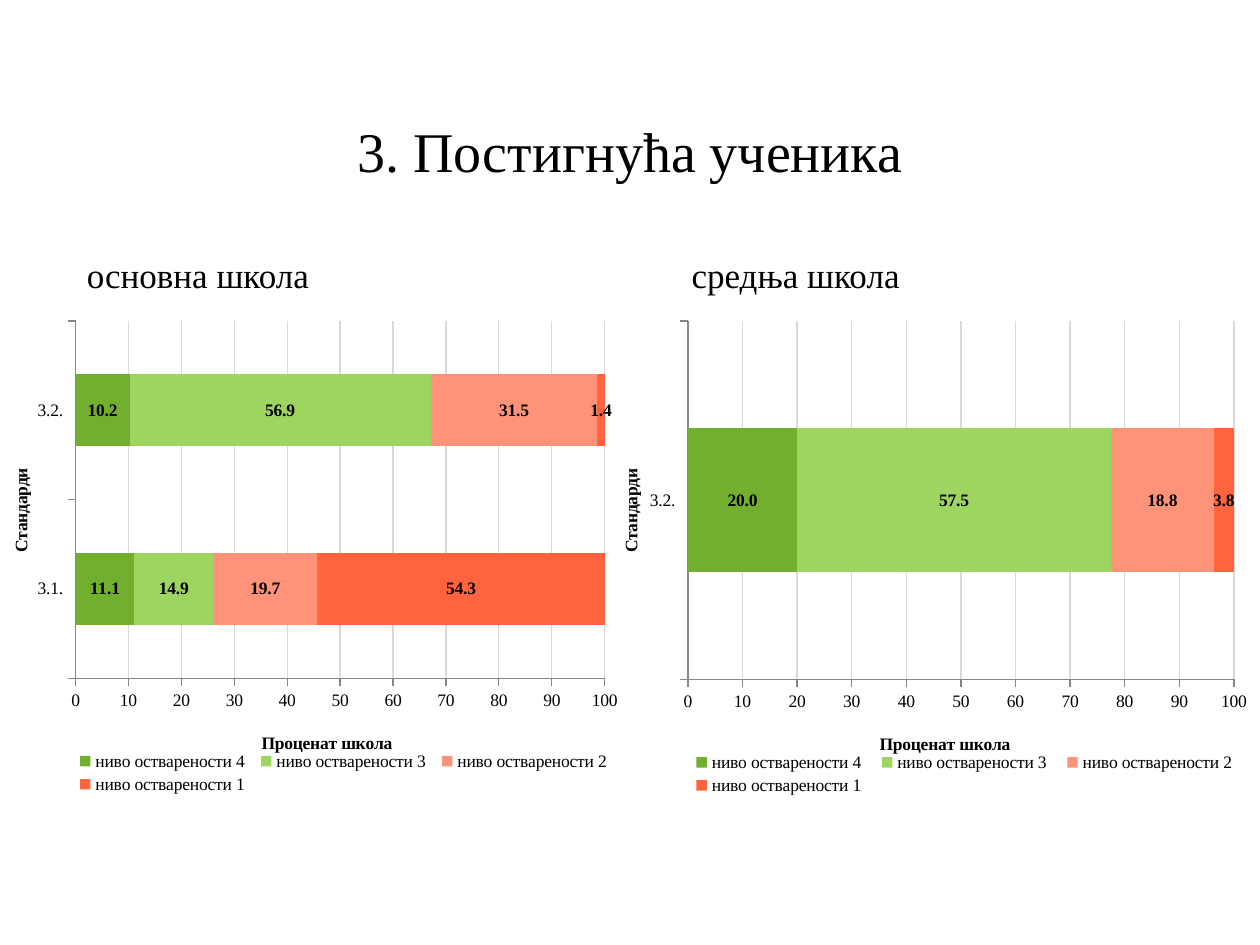
from dataclasses import dataclass

from lxml import etree
from pptx import Presentation
from pptx.chart.data import CategoryChartData
from pptx.dml.color import RGBColor
from pptx.enum.chart import XL_CHART_TYPE, XL_LABEL_POSITION, XL_LEGEND_POSITION, XL_TICK_MARK
from pptx.enum.text import MSO_ANCHOR, MSO_AUTO_SIZE, PP_ALIGN
from pptx.oxml.ns import qn
from pptx.util import Inches, Pt

BAR_STACKED = XL_CHART_TYPE.BAR_STACKED
LABEL_CENTER = XL_LABEL_POSITION.CENTER
LEGEND_RIGHT = XL_LEGEND_POSITION.RIGHT
TICK_OUT, TICK_NONE = XL_TICK_MARK.OUTSIDE, XL_TICK_MARK.NONE
MIDDLE = MSO_ANCHOR.MIDDLE
GROW = MSO_AUTO_SIZE.SHAPE_TO_FIT_TEXT
CENTER = PP_ALIGN.CENTER


@dataclass(frozen=True)
class Theme:
    font: str = "Times New Roman"
    text: str = "000000"
    grid: str = "D9D9D9"
    axis: str = "868686"
    levels: tuple = ("72AF2F", "9ED561", "FF9379", "FF643F")
    title_size: int = 32
    heading_size: int = 20
    chart_size: int = 10


THEME = Theme()
LEVELS = [f"ниво остварености {n}" for n in (4, 3, 2, 1)]
SCHOOLS = [
    {"heading": "основна школа", "heading_box": (0.59, 1.96, 2.28, 0.44),
     "chart_box": (0, 2.39, 5, 3.94), "standards": ["3.1.", "3.2."],
     "values": [(11.1, 10.2), (14.9, 56.9), (19.7, 31.5), (54.3, 1.4)]},
    {"heading": "средња школа", "heading_box": (5.39, 1.96, 2.28, 0.44),
     "chart_box": (4.84, 2.39, 5.16, 3.95), "standards": ["3.2."],
     "values": [(20,), (57.5,), (18.8,), (3.8,)]},
]


def set_font(font, size, bold=False):
    formats = {"name": THEME.font, "size": Pt(size), "bold": bold}
    for name, value in formats.items():
        setattr(font, name, value)
    font.color.rgb = RGBColor.from_string(THEME.text)


def set_line(line, color):
    line.color.rgb = RGBColor.from_string(color)
    line.width = Pt(0.75)


def set_layout(element, x, y, w=None, h=None, inner=False):
    for old in element.findall(qn("c:layout")):
        element.remove(old)
    layout = etree.Element(qn("c:layout"))
    manual = etree.SubElement(layout, qn("c:manualLayout"))
    parts = {"layoutTarget": "inner" if inner else None,
             "xMode": "edge", "yMode": "edge", "x": x, "y": y, "w": w, "h": h}
    for tag, value in parts.items():
        if value is not None:
            etree.SubElement(manual, qn(f"c:{tag}")).set("val", str(value))
    overlay = element.find(qn("c:overlay"))
    if overlay is None:
        element.insert(0, layout)
    else:
        overlay.addprevious(layout)


def add_title(slide, box, text):
    sp = slide.shapes.title
    for name, value in zip(("left", "top", "width", "height"), box):
        setattr(sp, name, Inches(value))
    tf = sp.text_frame
    tf.text = text
    tf.vertical_anchor = MIDDLE
    p = tf.paragraphs[0]
    p.alignment = CENTER
    set_font(p.runs[0].font, THEME.title_size)


def add_heading(slide, box, text):
    tf = slide.shapes.add_textbox(*map(Inches, box)).text_frame
    tf.word_wrap = True
    tf.auto_size = GROW
    p = tf.paragraphs[0]
    r = p.add_run()
    r.text = text
    set_font(r.font, THEME.heading_size)


def format_axis(axis, title, x, y, rotation):
    formats = {"major_tick_mark": TICK_OUT, "minor_tick_mark": TICK_NONE}
    for name, value in formats.items():
        setattr(axis, name, value)
    set_line(axis.format.line, THEME.axis)
    set_font(axis.tick_labels.font, THEME.chart_size)
    tf = axis.axis_title.text_frame
    tf.text = title
    set_font(tf.paragraphs[0].runs[0].font, THEME.chart_size, bold=True)
    element = axis.axis_title.element
    body = element.find(".//" + qn("a:bodyPr"))
    body.set("rot", str(rotation))
    body.set("vert", "horz")
    set_layout(element, x, y)


def add_level_chart(slide, box, standards, values):
    data = CategoryChartData(number_format="0.0")
    data.categories = standards
    for level, shares in zip(LEVELS, values):
        data.add_series(level, shares)
    chart = slide.shapes.add_chart(BAR_STACKED, *map(Inches, box), data).chart
    chart.has_title = False
    set_font(chart.font, THEME.chart_size)

    plot = chart.plots[0]
    for name, value in {"gap_width": 150, "overlap": 100, "vary_by_categories": False}.items():
        setattr(plot, name, value)
    for series, color in zip(plot.series, THEME.levels):
        series.format.fill.solid()
        series.format.fill.fore_color.rgb = RGBColor.from_string(color)
        labels = series.data_labels
        formats = {"show_value": True, "number_format": "0.0",
                   "number_format_is_linked": False, "position": LABEL_CENTER}
        for name, value in formats.items():
            setattr(labels, name, value)
        set_font(labels.font, THEME.chart_size, bold=True)

    format_axis(chart.category_axis, "Стандарди", 0.01, 0.33, -5400000)
    axis = chart.value_axis
    format_axis(axis, "Проценат школа", 0.41, 0.86, 0)
    for name, value in {"minimum_scale": 0, "maximum_scale": 100, "major_unit": 10}.items():
        setattr(axis, name, value)
    axis.tick_labels.number_format = "0"
    axis.tick_labels.number_format_is_linked = False
    axis.has_major_gridlines = True
    set_line(axis.major_gridlines.format.line, THEME.grid)

    chart.has_legend = True
    legend = chart.legend
    legend.position = LEGEND_RIGHT
    legend.include_in_layout = False
    set_font(legend.font, THEME.chart_size)
    set_layout(chart.element.find(".//" + qn("c:legend")), 0.11, 0.9, 0.87, 0.1)
    set_layout(chart.element.find(".//" + qn("c:plotArea")), 0.12, 0.04, 0.84, 0.72, inner=True)


def main():
    prs = Presentation()
    prs.slide_width, prs.slide_height = Inches(10), Inches(7.5)
    slide = prs.slides.add_slide(prs.slide_layouts[5])
    add_title(slide, (0.5, 0.84, 9, 0.71), "3. Постигнућа ученика")
    for school in SCHOOLS:
        add_heading(slide, school["heading_box"], school["heading"])
    for school in SCHOOLS:
        add_level_chart(slide, school["chart_box"], school["standards"], school["values"])
    prs.save("out.pptx")


if __name__ == "__main__":
    main()
